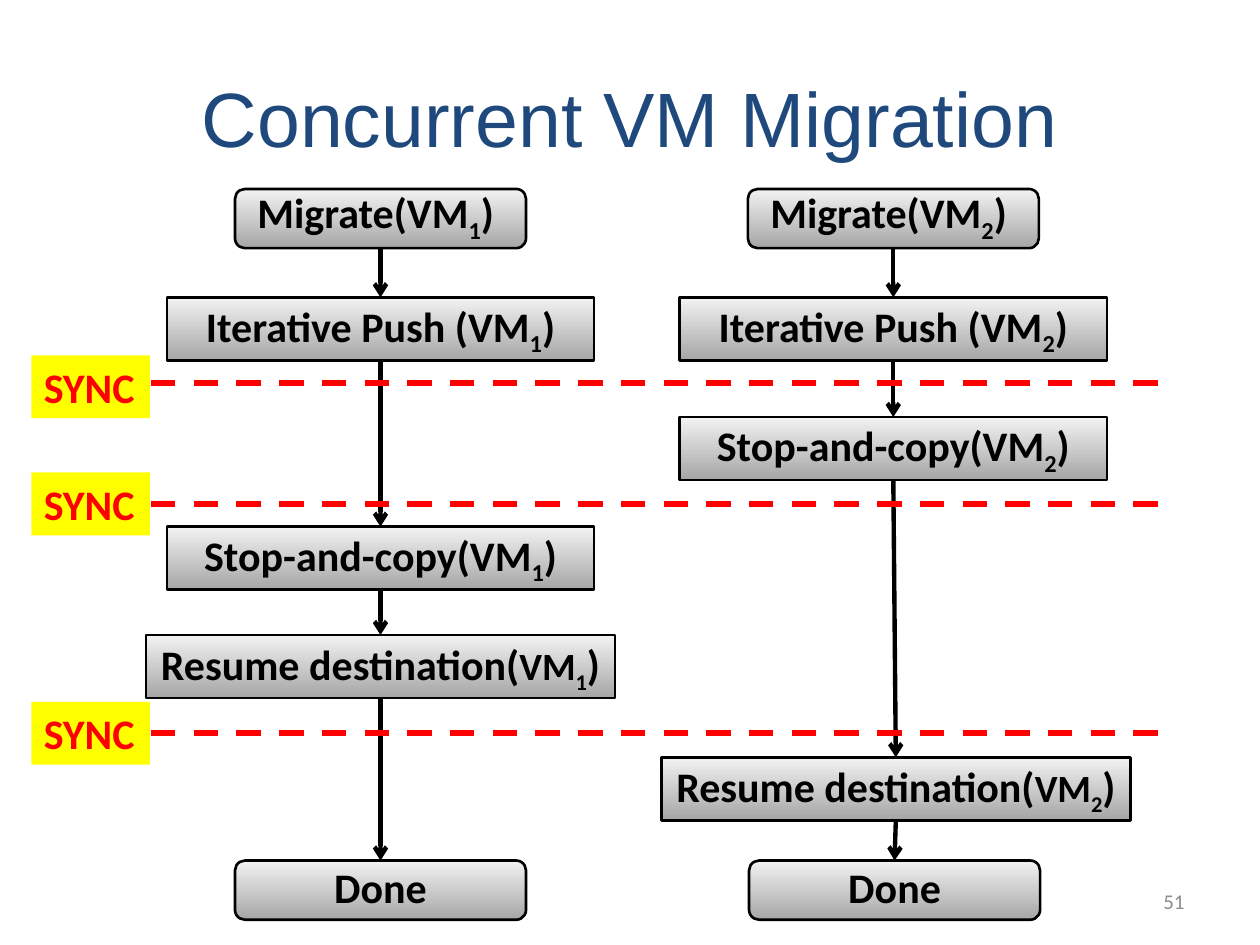
import pptx
import pptx.util
import pptx.dml.color
import pptx.enum.dml
import pptx.enum.shapes
import pptx.enum.text
import pptx.oxml.ns
import lxml.etree

RGB = pptx.dml.color.RGBColor
Inches, Pt = pptx.util.Inches, pptx.util.Pt
SHAPE = pptx.enum.shapes.MSO_SHAPE
ALIGN = pptx.enum.text.PP_ALIGN
MIDDLE = pptx.enum.text.MSO_ANCHOR.MIDDLE
qn = pptx.oxml.ns.qn

BLACK, RED, YELLOW = RGB(0, 0, 0), RGB(255, 0, 0), RGB(255, 255, 0)
NAVY, GREY = RGB(0x1F, 0x49, 0x7D), RGB(0x8C, 0x8C, 0x8C)
SHADE_DARK, SHADE_LIGHT = RGB(0xA6, 0xA6, 0xA6), RGB(0xF2, 0xF2, 0xF2)

STEP_FONT = {"name": "Calibri", "size": Pt(24), "bold": True}

# Box kinds: preset, width, height, top and bottom inset
PILL = (SHAPE.FLOWCHART_ALTERNATE_PROCESS, 2.31, 0.47, 0.05, 0.1)
STEP = (SHAPE.FLOWCHART_PROCESS, 3.39, 0.5, 0.05, 0.05)
WIDE = (SHAPE.FLOWCHART_PROCESS, 3.72, 0.5, 0.05, 0.05)


def set_all(obj, **values):
    for name, value in values.items():
        setattr(obj, name, value)


def add_run(p, text, color, font, base=0):
    r = p.add_run()
    r.text = text
    set_all(r.font, **font)
    r.font.color.rgb = color
    if base:
        r.font._element.set("baseline", str(base * 1000))


def add_line(s, start, end, color, width):
    c = s.shapes.add_connector(pptx.enum.shapes.MSO_CONNECTOR.STRAIGHT,
                               *[Inches(v) for v in (*start, *end)])
    c.line.color.rgb = color
    c.line.width = Pt(width)
    lxml.etree.SubElement(c._element.spPr, qn("a:effectLst"))
    return c


def add_title(s, box):
    t = s.shapes.title
    set_all(t, **dict(zip(("left", "top", "width", "height"), map(Inches, box))))
    t.text_frame.vertical_anchor = MIDDLE
    p = t.text_frame.paragraphs[0]
    p.alignment = ALIGN.CENTER
    add_run(p, "Concurrent VM Migration", NAVY, {"name": "Arial", "size": Pt(44)})


def add_page_number(s, box):
    tf = s.shapes.add_textbox(*map(Inches, box)).text_frame
    set_all(tf, word_wrap=True, vertical_anchor=MIDDLE)
    tf.paragraphs[0].alignment = ALIGN.RIGHT
    add_run(tf.paragraphs[0], "51", GREY, {"name": "Calibri", "size": Pt(12)})


def add_step(s, center, top, kind, runs):
    preset, width, height, inset_top, inset_bottom = kind
    sp = s.shapes.add_shape(preset, *map(Inches, (center - width / 2, top, width, height)))
    sp.shadow.inherit = False
    sp.fill.gradient()
    sp.fill.gradient_angle = 90
    for stop, color, pos in zip(sp.fill.gradient_stops, (SHADE_DARK, SHADE_LIGHT), (0, 1)):
        stop.color.rgb = color
        stop.position = pos
    sp.line.color.rgb = BLACK
    sp.line.width = Pt(1.5)
    tf = sp.text_frame
    set_all(tf, word_wrap=True, vertical_anchor=MIDDLE,
            margin_top=Inches(inset_top), margin_bottom=Inches(inset_bottom))
    p = tf.paragraphs[0]
    p.alignment = ALIGN.CENTER
    for text, size, base in runs:
        add_run(p, text, BLACK, {**STEP_FONT, "size": Pt(size)}, base)
    return sp


def add_arrow(s, upper, lower):
    c = add_line(s, (0, 0), (1, 1), BLACK, 2.5)
    c.begin_connect(upper, 2)
    c.end_connect(lower, 0)
    lxml.etree.SubElement(c.line._get_or_add_ln(), qn("a:tailEnd"), type="arrow")


def add_flow(s, center, vm, tops, shifts):
    """One migration from start to finish, as boxes joined by arrows."""
    def call(name, end=")"):
        return [(name + "(VM", 24, 0), (vm, 24, -25), (end, 24, 0)]

    steps = [(PILL, call("Migrate", ") ")),
             (STEP, call("Iterative Push ")),
             (STEP, call("Stop-and-copy")),
             (WIDE, [("Resume destination(", 24, 0), ("VM", 22, 0),
                     (vm, 22, -25), (")", 24, 0)]),
             (PILL, [("Done", 24, 0)])]
    boxes = [add_step(s, center + shift, top, *step)
             for step, top, shift in zip(steps, tops, shifts)]
    for upper, lower in zip(boxes, boxes[1:]):
        add_arrow(s, upper, lower)


def add_sync(s, line_y, box):
    """Dashed barrier across both flows with its label."""
    line = add_line(s, (0.86, line_y), (9.31, line_y), RED, 3.5)
    line.line.dash_style = pptx.enum.dml.MSO_LINE.DASH
    sp = s.shapes.add_shape(SHAPE.RECTANGLE, *map(Inches, box))
    sp.shadow.inherit = False
    sp.fill.solid()
    sp.fill.fore_color.rgb = YELLOW
    sp.line.fill.background()
    tf = sp.text_frame
    set_all(tf, word_wrap=False, vertical_anchor=pptx.enum.text.MSO_ANCHOR.TOP,
            auto_size=pptx.enum.text.MSO_AUTO_SIZE.SHAPE_TO_FIT_TEXT)
    tf.paragraphs[0].alignment = ALIGN.LEFT
    add_run(tf.paragraphs[0], "SYNC", RED, STEP_FONT)


def main():
    prs = pptx.Presentation()
    set_all(prs, slide_width=Inches(10), slide_height=Inches(7.5))
    s = prs.slides.add_slide(prs.slide_layouts[5])

    add_title(s, (0.5, 0.3, 9, 1.25))
    add_page_number(s, (7.17, 6.95, 2.33, 0.4))

    # The two concurrent flows
    add_flow(s, 3.02, "1", (1.5, 2.36, 4.18, 5.04, 6.83), (0, 0, 0, 0, 0))
    add_flow(s, 7.09, "2", (1.5, 2.36, 3.31, 6.01, 6.83), (0, 0, 0, 0.02, 0.01))

    # Synchronisation points
    for line_y, label_top in ((3.04, 2.82), (4, 3.75), (5.82, 5.57)):
        add_sync(s, line_y, (0.25, label_top, 0.94, 0.5))

    prs.save("out.pptx")


if __name__ == "__main__":
    main()
